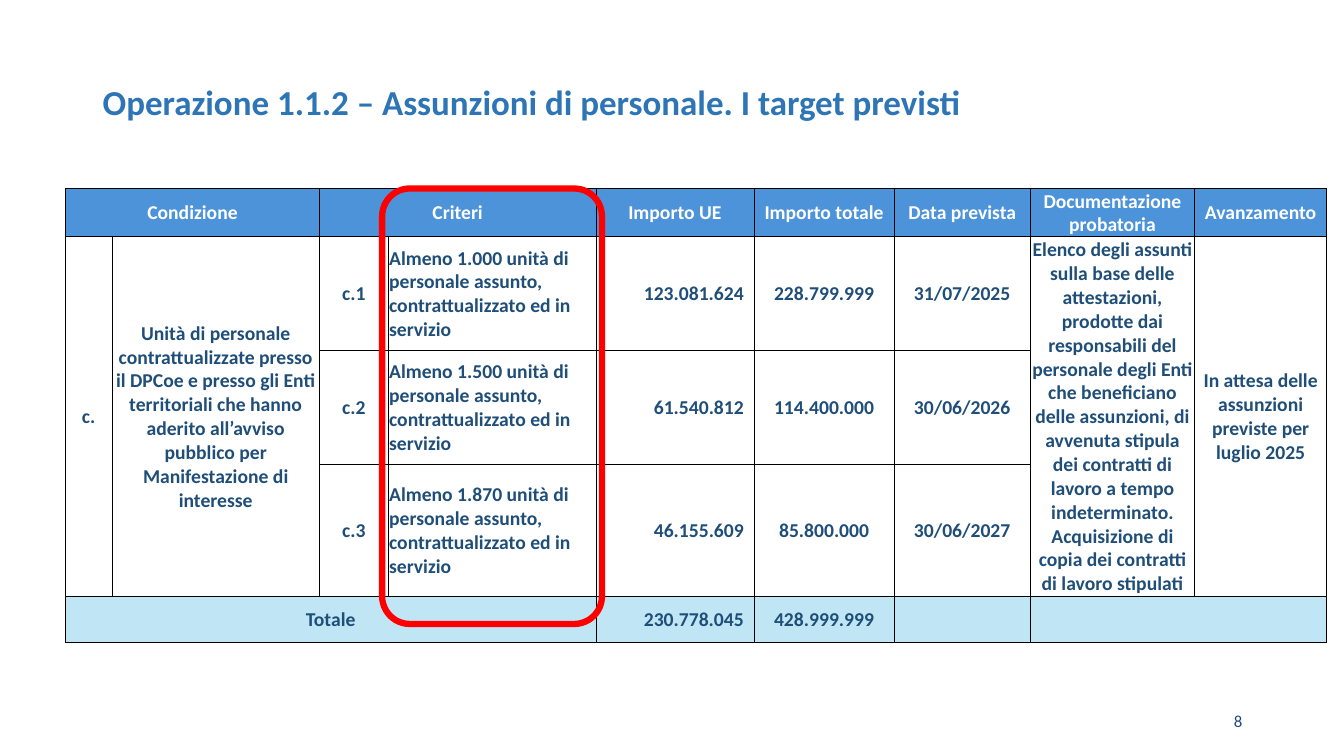
from copy import deepcopy

from lxml.etree import SubElement
from pptx import Presentation
from pptx.dml.color import RGBColor
from pptx.enum.shapes import MSO_SHAPE
from pptx.enum.text import MSO_ANCHOR, PP_ALIGN
from pptx.oxml.ns import qn
from pptx.util import Inches, Pt

BLUE = RGBColor(0x2E, 0x75, 0xB6)
NAVY = RGBColor(0x1F, 0x4E, 0x79)
HEADER = RGBColor(0x4D, 0x93, 0xD9)
TOTAL = RGBColor(0xC0, 0xE6, 0xF5)
WHITE = RGBColor(0xFF, 0xFF, 0xFF)
RED = RGBColor(0xFF, 0x00, 0x00)
FONT = "Calibri"

LEFT, TOP = 0.65, 1.87
COLS = [0.46, 2.06, 0.68, 2.06, 1.57, 1.39, 1.35, 1.63, 1.31]
ROWS = [0.46, 1.13, 1.13, 1.31, 0.46]
CRITERI_COL, IMPORTO_UE_COL = 3, 4
MERGES = [(0, 0, 0, 1), (0, 2, 0, 3), (1, 0, 3, 0), (1, 1, 3, 1),
          (1, 7, 3, 7), (1, 8, 3, 8), (4, 0, 4, 3), (4, 7, 4, 8)]

CONDIZIONE = ("Unità di personale contrattualizzate presso il DPCoe e presso gli Enti "
              "territoriali che hanno aderito all’avviso pubblico per Manifestazione "
              "di interesse")
DOCUMENTAZIONE = ("Elenco degli assunti sulla base delle attestazioni, prodotte dai "
                  "responsabili del personale degli Enti che beneficiano delle assunzioni, "
                  "di avvenuta stipula dei contratti di lavoro a tempo indeterminato.\n"
                  "Acquisizione di copia dei contratti di lavoro stipulati")
AVANZAMENTO = "In attesa delle assunzioni previste per luglio 2025"
CRITERIO = "Almeno {} unità di personale assunto, contrattualizzato ed in servizio"
TARGETS = [("1.000", "123.081.624", "228.799.999", "31/07/2025"),
           ("1.500", "61.540.812", "114.400.000", "30/06/2026"),
           ("1.870", "46.155.609", "85.800.000", "30/06/2027")]


def set_attrs(obj, attrs):
    """Set every attribute of a format dict on an object."""
    for name, value in attrs.items():
        setattr(obj, name, value)


def write(tf, text, size, color, bold=True, align=PP_ALIGN.LEFT):
    """Write one formatted paragraph, with line breaks at newlines."""
    p = tf.paragraphs[0]
    p.alignment = align
    for i, line in enumerate(text.split("\n")):
        if i:
            p.add_line_break()
        r = p.add_run()
        r.text = line
        set_attrs(r.font, {"name": FONT, "size": Pt(size), "bold": bold})
        r.font.color.rgb = color
    for br in p._p.findall(qn("a:br")):
        br.append(deepcopy(r._r.rPr))
    return p


def add_text(slide, box, text, size, color, **style):
    """Add a wrapped, vertically centred text box."""
    tf = slide.shapes.add_textbox(*map(Inches, box)).text_frame
    set_attrs(tf, {"word_wrap": True, "vertical_anchor": MSO_ANCHOR.MIDDLE})
    return write(tf, text, size, color, **style)


def add_borders(cell):
    """Draw a thin black line on all four sides of a cell."""
    tc_pr = cell._tc.get_or_add_tcPr()
    for side in ("lnL", "lnR", "lnT", "lnB"):
        ln = SubElement(tc_pr, qn(f"a:{side}"), w=str(Pt(0.5)))
        SubElement(SubElement(ln, qn("a:solidFill")), qn("a:srgbClr"), val="000000")


def format_cell(cell, row, col, text):
    """Fill, border and write one cell according to its row and column."""
    amount = row > 0 and col == IMPORTO_UE_COL
    set_attrs(cell, {"margin_left": Inches(0.01), "margin_top": Inches(0.01),
                     "margin_right": Inches(0.1 if amount else 0.01),
                     "margin_bottom": 0, "vertical_anchor": MSO_ANCHOR.MIDDLE})
    add_borders(cell)
    fill = {0: HEADER, len(ROWS) - 1: TOTAL}.get(row)
    if fill is None:
        cell.fill.background()
    else:
        cell.fill.solid()
        cell.fill.fore_color.rgb = fill
    if text:
        criterio = row > 0 and col == CRITERI_COL
        align = (PP_ALIGN.RIGHT if amount else
                 PP_ALIGN.LEFT if criterio else PP_ALIGN.CENTER)
        write(cell.text_frame, text, 14, WHITE if row == 0 else NAVY, align=align)


def table_rows():
    """Return the table's texts, row by row."""
    rows = [["Condizione", "", "Criteri", "", "Importo UE", "Importo totale",
             "Data prevista", "Documentazione probatoria", "Avanzamento"]]
    for n, (units, ue, total, date) in enumerate(TARGETS, 1):
        rows.append(["", "", f"c.{n}", CRITERIO.format(units), ue, total, date, "", ""])
    rows[1][:2] = ["c.", CONDIZIONE]
    rows[1][7:] = [DOCUMENTAZIONE, AVANZAMENTO]
    rows.append(["Totale", "", "", "", "230.778.045", "428.999.999", "", "", ""])
    return rows


def add_targets_table(slide):
    """Add the table of targets."""
    box = map(Inches, (LEFT, TOP, sum(COLS), sum(ROWS)))
    table = slide.shapes.add_table(len(ROWS), len(COLS), *box).table
    set_attrs(table, {"first_row": False, "horz_banding": False})
    for column, width in zip(table.columns, COLS):
        column.width = Inches(width)
    for row, height in zip(table.rows, ROWS):
        row.height = Inches(height)
    for top, left, bottom, right in MERGES:
        table.cell(top, left).merge(table.cell(bottom, right))
    for i, texts in enumerate(table_rows()):
        for j, text in enumerate(texts):
            format_cell(table.cell(i, j), i, j, text)


def add_criteria_frame(slide):
    """Ring the criteria column with a red rounded frame."""
    pad = 0.06
    box = (LEFT + sum(COLS[:CRITERI_COL]) - pad, TOP,
           COLS[CRITERI_COL] + 2 * pad, sum(ROWS) - 0.17)
    sp = slide.shapes.add_shape(MSO_SHAPE.ROUNDED_RECTANGLE, *map(Inches, box))
    sp.adjustments[0] = 0.126
    sp.shadow.inherit = False
    sp.fill.background()
    sp.line.color.rgb = RED
    sp.line.width = Pt(4.5)


def main():
    """Build and save the slide."""
    prs = Presentation()
    set_attrs(prs, {"slide_width": Inches(13.33), "slide_height": Inches(7.5)})
    slide = prs.slides.add_slide(prs.slide_layouts[6])
    p = add_text(slide, (0.92, 0.74, 11.5, 0.58),
                 "Operazione 1.1.2 – Assunzioni di personale. I target previsti", 25, BLUE)
    p.line_spacing = 0.9
    add_text(slide, (9.42, 6.95, 3, 0.4), "8", 12, NAVY, bold=False, align=PP_ALIGN.RIGHT)
    add_targets_table(slide)
    add_criteria_frame(slide)
    prs.save("out.pptx")


if __name__ == "__main__":
    main()
